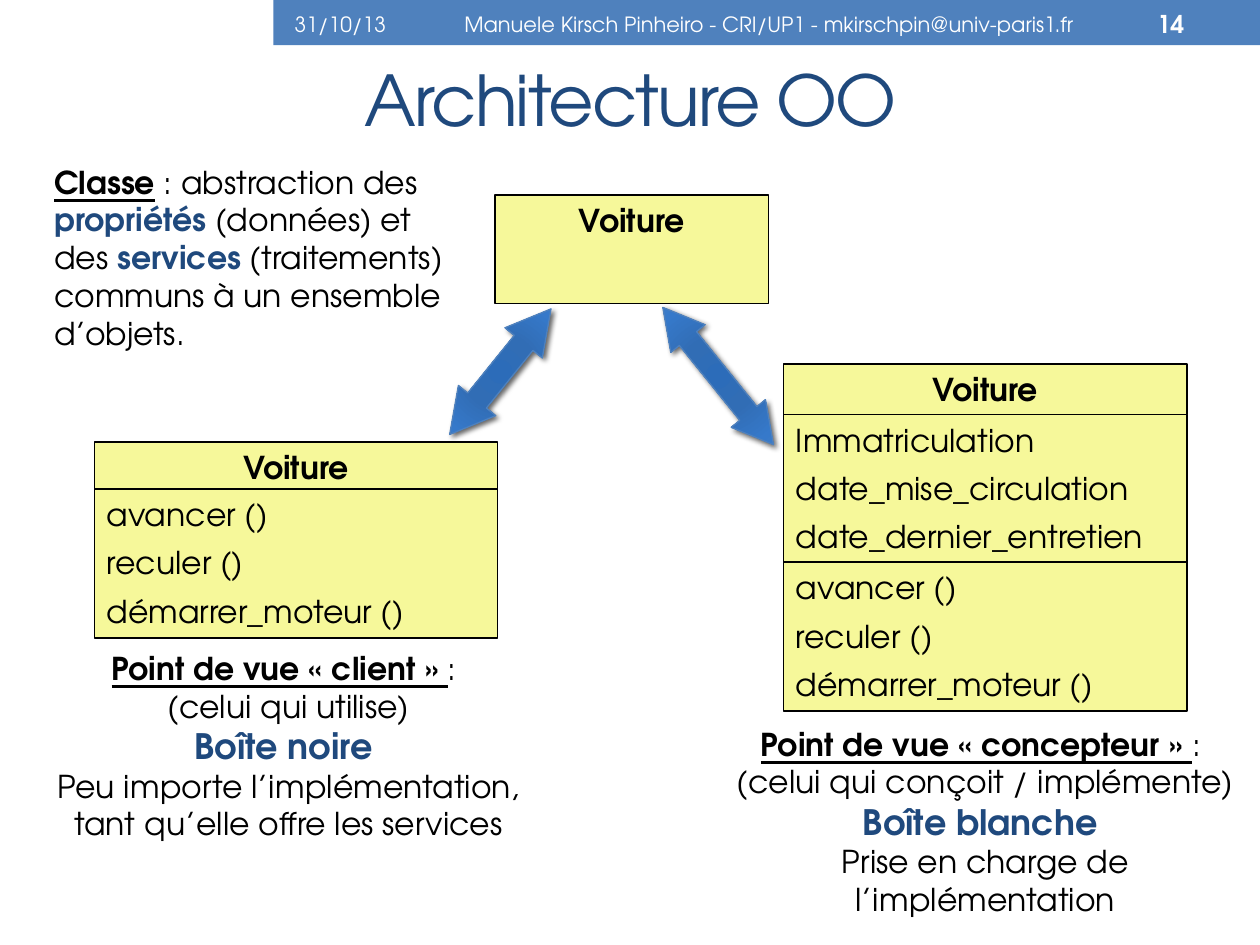
"""Build the object-oriented architecture slide with its three class cards."""
from dataclasses import dataclass

from lxml import etree
from pptx import Presentation
from pptx.dml.color import RGBColor
from pptx.enum.shapes import MSO_SHAPE
from pptx.enum.text import MSO_ANCHOR, MSO_AUTO_SIZE, PP_ALIGN
from pptx.oxml import parse_xml
from pptx.oxml.ns import nsdecls, qn
from pptx.util import Pt

LEFT, CENTER, RIGHT = PP_ALIGN.LEFT, PP_ALIGN.CENTER, PP_ALIGN.RIGHT
TOP, MIDDLE = MSO_ANCHOR.TOP, MSO_ANCHOR.MIDDLE
RECTANGLE, DOUBLE_ARROW = MSO_SHAPE.RECTANGLE, MSO_SHAPE.LEFT_RIGHT_ARROW
NO_AUTOFIT = MSO_AUTO_SIZE.NONE


@dataclass(frozen=True)
class Theme:
    font: str = "TeX Gyre Adventor"
    bar: str = "4F81BD"
    accent: str = "1F497D"
    card: str = "F6F89A"
    ink: str = "000000"
    paper: str = "FFFFFF"
    arrow_stops: tuple = ((0, "2C6CB9"), (34, "316DB5"), (70, "3679CA"), (100, "4F81BD"))
    title_size: float = 40
    strong_size: float = 20
    body_size: float = 18
    number_size: float = 14
    footer_size: float = 12


THEME = Theme()


@dataclass(frozen=True)
class Box:
    left: float
    top: float
    width: float
    height: float

    def lengths(self) -> tuple:
        return Pt(self.left), Pt(self.top), Pt(self.width), Pt(self.height)


@dataclass(frozen=True)
class Run:
    text: str
    size: float = THEME.body_size
    color: str = THEME.ink
    bold: bool = False
    underline: bool = False
    spacing: float = 0


@dataclass(frozen=True)
class Card:
    left: float
    top: float
    header_pitch: float
    sections: tuple


@dataclass(frozen=True)
class Arrow:
    box: Box
    rotation: float


@dataclass(frozen=True)
class Label:
    box: Box
    run: Run
    align: PP_ALIGN


@dataclass(frozen=True)
class Viewpoint:
    box: Box
    heading: str
    reader: str
    verdict: str
    reason: str


CARD_WIDTH, HEADER_HEIGHT, SECTION_HEIGHT, SECTION_PITCH = 230.4, 28.8, 85, 84.4
CLASS_NAME = "Voiture"
ATTRIBUTES = ("Immatriculation", "date_mise_circulation", "date_dernier_entretien")
SERVICES = ("avancer ()", "reculer ()", "démarrer_moteur ()")

LABELS = (
    Label(Box(161.3, 1.4, 85, 24.5), Run("31/10/13", THEME.footer_size, THEME.paper), LEFT),
    Label(Box(241.2, 1.4, 396.7, 24.5),
          Run("Manuele Kirsch Pinheiro - CRI/UP1 - mkirschpin@univ-paris1.fr",
              THEME.footer_size, THEME.paper), CENTER),
    Label(Box(643.7, 1.4, 40.3, 24.5),
          Run("14", THEME.number_size, THEME.paper, bold=True), RIGHT),
)
CARDS = (
    Card(54, 252.7, 26.7, (SERVICES,)),
    Card(447.8, 208.1, 28.8, (ATTRIBUTES, SERVICES)),
)
ARROWS = (
    Arrow(Box(360, 202.3, 100.8, 25.2), 51.1),
    Arrow(Box(239.8, 198.7, 92.2, 27.4), 308.9),
)
VIEWPOINTS = (
    Viewpoint(Box(406.1, 414, 313.9, 111.6), "Point de vue « concepteur » ",
              "(celui qui conçoit / implémente)", "Boîte blanche ",
              "Prise en charge de l’implémentation"),
    Viewpoint(Box(20.9, 370.8, 288, 111.6), "Point de vue « client » ",
              "(celui qui utilise)", "Boîte noire ",
              "Peu importe l’implémentation, tant qu’elle offre les services"),
)
DEFINITION = (
    Run("Classe", bold=True, underline=True),
    Run(" : abstraction des "),
    Run("propriétés ", color=THEME.accent, bold=True),
    Run("(données) et des "),
    Run("services", color=THEME.accent, bold=True),
    Run(" (traitements) communs à un ensemble d’objets."),
)


def write_text(text_frame, paragraphs, *, align=LEFT, anchor=TOP, inset=None, space=0) -> None:
    """Fill a text frame with paragraphs, each a sequence of runs."""
    text_frame.word_wrap = True
    text_frame.auto_size = NO_AUTOFIT
    text_frame.vertical_anchor = anchor
    if inset is not None:
        text_frame.margin_left = text_frame.margin_right = Pt(inset)
        text_frame.margin_top = text_frame.margin_bottom = Pt(inset)
    for index, runs in enumerate(paragraphs):
        paragraph = text_frame.add_paragraph() if index else text_frame.paragraphs[0]
        paragraph.alignment = align
        paragraph.space_before = Pt(space if index else 0)
        for item in runs:
            run = paragraph.add_run()
            run.text = item.text
            run.font.name = THEME.font
            run.font.size = Pt(item.size)
            run.font.bold = item.bold
            run.font.underline = item.underline
            run.font.color.rgb = RGBColor.from_string(item.color)
            if item.spacing:
                run._r.get_or_add_rPr().set("spc", str(round(item.spacing * 100)))


def add_text(slide, box: Box, paragraphs, **text_format) -> None:
    """Add a text box."""
    write_text(slide.shapes.add_textbox(*box.lengths()).text_frame, paragraphs, **text_format)


def add_rectangle(shapes, box: Box, fill: str, line: str | None = None):
    """Add a flat rectangle, outlined when a line colour is given."""
    shape = shapes.add_shape(RECTANGLE, *box.lengths())
    shape.shadow.inherit = False
    shape.fill.solid()
    shape.fill.fore_color.rgb = RGBColor.from_string(fill)
    if line:
        shape.line.color.rgb = RGBColor.from_string(line)
        shape.line.width = Pt(1)
    else:
        shape.line.fill.background()
    return shape


def add_class_name(shapes, box: Box) -> None:
    """Add the compartment that names the class."""
    shape = add_rectangle(shapes, box, THEME.card, THEME.ink)
    write_text(shape.text_frame, [[Run(CLASS_NAME, bold=True)]], align=CENTER)


def add_card(slide, card: Card) -> None:
    """Add a grouped class card with its stacked sections."""
    shapes = slide.shapes.add_group_shape().shapes
    add_class_name(shapes, Box(card.left, card.top, CARD_WIDTH, HEADER_HEIGHT))
    for index, members in enumerate(card.sections):
        top = card.top + card.header_pitch + index * SECTION_PITCH
        box = Box(card.left, top, CARD_WIDTH, SECTION_HEIGHT)
        shape = add_rectangle(shapes, box, THEME.card, THEME.ink)
        write_text(shape.text_frame, [[Run(member)] for member in members], space=6)


def add_arrow(slide, arrow: Arrow) -> None:
    """Add a rotated double arrow with a radial gradient and a shadow."""
    shape = slide.shapes.add_shape(DOUBLE_ARROW, *arrow.box.lengths())
    shape.rotation = arrow.rotation
    shape.adjustments[0], shape.adjustments[1] = 0.5, 0.91
    shape.line.color.rgb = RGBColor.from_string(THEME.bar)
    shape.line.width = Pt(0.75)
    shape.shadow.inherit = False
    stops = "".join(f'<a:gs pos="{place * 1000}"><a:srgbClr val="{color}"/></a:gs>'
                    for place, color in THEME.arrow_stops)
    gradient = parse_xml(
        f'<a:gradFill {nsdecls("a")} rotWithShape="1"><a:gsLst>{stops}</a:gsLst><a:path path="circle">'
        '<a:fillToRect l="100000" t="100000" r="100000" b="100000"/></a:path></a:gradFill>')
    properties = shape._element.spPr
    properties.find(qn("a:prstGeom")).addnext(gradient)
    shadow = etree.SubElement(
        properties.find(qn("a:effectLst")), qn("a:outerShdw"),
        blurRad=str(Pt(3)), dist=str(Pt(2)), dir="2700000", rotWithShape="0")
    color = etree.SubElement(shadow, qn("a:srgbClr"), val=THEME.ink)
    etree.SubElement(color, qn("a:alpha"), val="60000")


def add_viewpoint(slide, viewpoint: Viewpoint) -> None:
    """Add the centred explanation below a class card."""
    add_text(slide, viewpoint.box, [
        [Run(viewpoint.heading, bold=True, underline=True), Run(": ")],
        [Run(viewpoint.reader)],
        [Run(viewpoint.verdict, THEME.strong_size, THEME.accent, bold=True)],
        [Run(viewpoint.reason)],
    ], align=CENTER, inset=0)


def main() -> None:
    """Create and save the presentation."""
    presentation = Presentation()
    presentation.slide_width, presentation.slide_height = Pt(720), Pt(540)
    slide = presentation.slides.add_slide(presentation.slide_layouts[5])
    title = slide.shapes.title
    title.left, title.top, title.width, title.height = Box(36.7, 25.9, 647.3, 61.2).lengths()
    write_text(title.text_frame,
               [[Run("Architecture OO", THEME.title_size, THEME.accent, spacing=-1)]],
               align=CENTER, anchor=MIDDLE)
    add_rectangle(slide.shapes, Box(156.2, 0, 563.8, 25.9), THEME.bar)
    for label in LABELS:
        add_text(slide, label.box, [[label.run]], align=label.align, anchor=MIDDLE)
    for card in CARDS:
        add_card(slide, card)
    add_class_name(slide.shapes, Box(283, 111.6, 156.2, 61.9))
    add_text(slide, Box(31, 92.9, 234, 111.6), [DEFINITION], inset=0)
    for arrow in ARROWS:
        add_arrow(slide, arrow)
    for viewpoint in VIEWPOINTS:
        add_viewpoint(slide, viewpoint)
    presentation.save("out.pptx")


if __name__ == "__main__":
    main()
